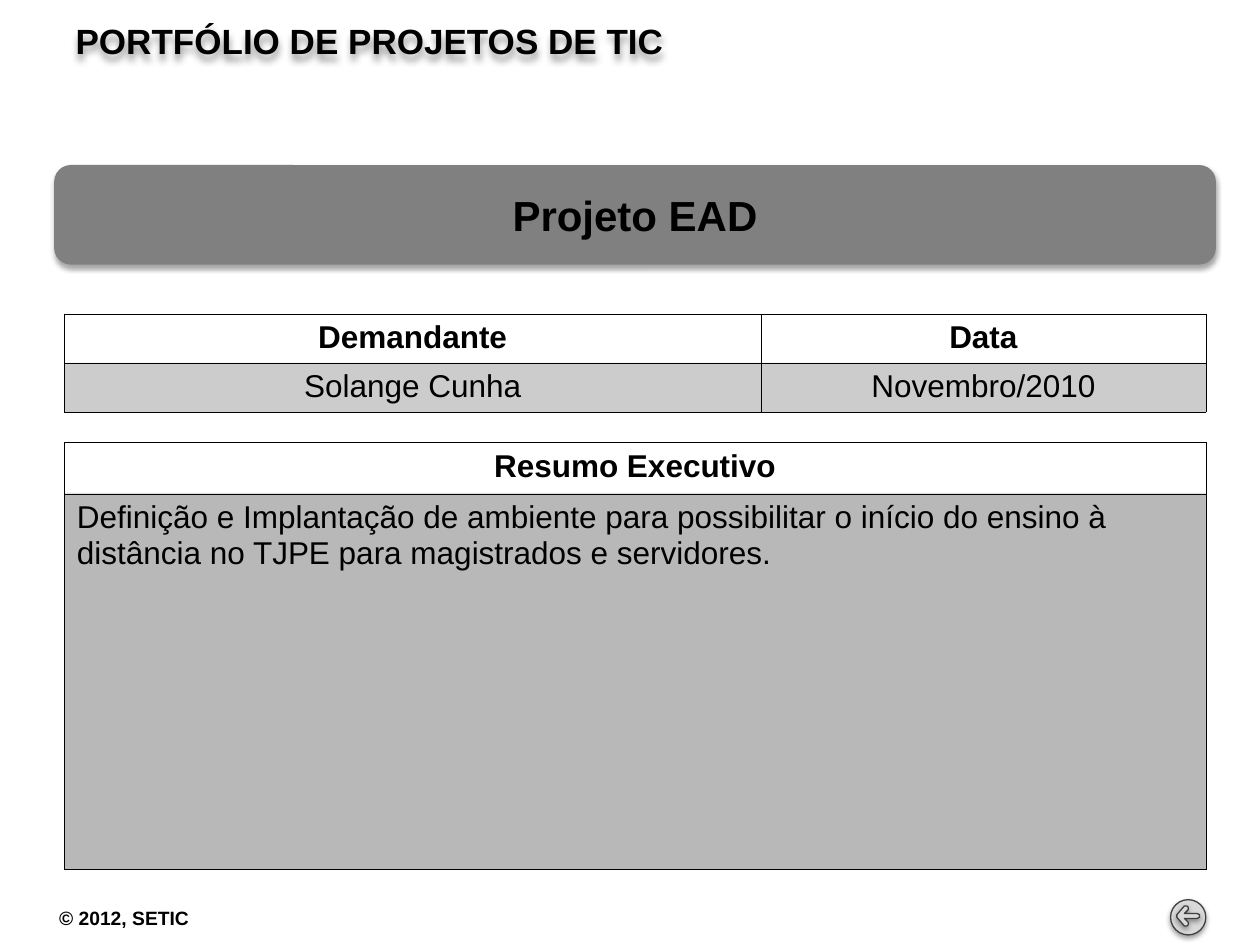
from lxml import etree
from pptx import Presentation
from pptx.dml.color import RGBColor
from pptx.enum.shapes import MSO_SHAPE
from pptx.enum.text import MSO_ANCHOR, PP_ALIGN
from pptx.oxml.ns import qn
from pptx.util import Inches, Pt

FONT = "Arial"
COLORS = {
    "black": "000000",
    "banner": "808080",
    "panel": "E6E6E6",
    "button": "D9D9D9",
    "outline": "404040",
}


def color(name):
    return RGBColor.from_string(COLORS[name])


def format_text(frame, text, size, bold=True, align=PP_ALIGN.LEFT):
    frame.text = text
    paragraph = frame.paragraphs[0]
    paragraph.alignment = align
    font = paragraph.font
    font.name, font.size, font.bold = FONT, Pt(size), bold
    font.color.rgb = color("black")


def add_alpha(fill_parent, percent):
    srgb = fill_parent.find(".//" + qn("a:srgbClr"))
    etree.SubElement(srgb, qn("a:alpha"), val=str(percent * 1000))


def add_shadow(shape, opacity, blur, distance):
    properties = shape._element.spPr
    for old in properties.findall(qn("a:effectLst")):
        properties.remove(old)
    effects = etree.SubElement(properties, qn("a:effectLst"))
    shadow = etree.SubElement(
        effects, qn("a:outerShdw"), blurRad=str(Pt(blur)), dist=str(Pt(distance)),
        dir="5400000", algn="ctr", rotWithShape="0")
    etree.SubElement(shadow, qn("a:srgbClr"), val=COLORS["black"])
    add_alpha(effects, opacity)


def add_plain_shape(slide, kind, box, fill):
    shape = slide.shapes.add_shape(kind, *map(Inches, box))
    shape.shadow.inherit = False
    shape.fill.solid()
    shape.fill.fore_color.rgb = color(fill)
    shape.line.fill.background()
    return shape


def place_title(slide, box, text):
    title = slide.shapes.title
    title.left, title.top, title.width, title.height = map(Inches, box)
    format_text(title.text_frame, text, 20)
    title.text_frame.vertical_anchor = MSO_ANCHOR.MIDDLE
    add_shadow(title, 40, 4, 3)


def add_banner(slide, box, text):
    banner = add_plain_shape(slide, MSO_SHAPE.ROUNDED_RECTANGLE, box, "banner")
    format_text(banner.text_frame, text, 24, align=PP_ALIGN.CENTER)
    banner.text_frame.vertical_anchor = MSO_ANCHOR.MIDDLE
    add_shadow(banner, 35, 3.1, 1.8)


def add_cell_borders(cell):
    properties = cell._tc.get_or_add_tcPr()
    for index, side in enumerate(("a:lnL", "a:lnR", "a:lnT", "a:lnB")):
        line = etree.Element(qn(side), w=str(Pt(0.25)))
        fill = etree.SubElement(line, qn("a:solidFill"))
        etree.SubElement(fill, qn("a:srgbClr"), val=COLORS["black"])
        properties.insert(index, line)


def add_info_table(slide, box, widths, heights, rows, body_align):
    table = slide.shapes.add_table(len(rows), len(widths), *map(Inches, box)).table
    table.horz_banding = table.first_row = False
    for column, width in zip(table.columns, widths):
        column.width = Inches(width)
    for row_index, (height, texts) in enumerate(zip(heights, rows)):
        table.rows[row_index].height = Inches(height)
        header = row_index == 0
        for column_index, text in enumerate(texts):
            cell = table.cell(row_index, column_index)
            format_text(cell.text_frame, text, 18, bold=header,
                        align=PP_ALIGN.CENTER if header else body_align)
            if header:
                cell.fill.background()
            else:
                cell.fill.solid()
                cell.fill.fore_color.rgb = color("black")
                add_alpha(cell._tc.tcPr, 20)
            add_cell_borders(cell)


def add_footer(slide, box, text):
    footer = slide.shapes.add_textbox(*map(Inches, box))
    footer.text_frame.word_wrap = False
    format_text(footer.text_frame, text, 11)


def add_back_button(slide, box):
    left, top, width, height = box
    circle = add_plain_shape(slide, MSO_SHAPE.OVAL, box, "button")
    # Upper half of the arrow, from its tip, as offsets from the centre
    upper = [(-0.09, -0.01), (-0.03, -0.08), (-0.01, -0.08), (0, -0.07),
             (0, -0.05), (-0.03, -0.02), (0.07, -0.02), (0.09, -0.01)]
    outline = upper + [(x, -y) for x, y in reversed(upper)]
    center_x, center_y = left + width / 2, top + height / 2 - 0.01
    points = [(Inches(center_x + x), Inches(center_y + y)) for x, y in outline]
    builder = slide.shapes.build_freeform(*points[0])
    builder.add_line_segments(points[1:], close=True)
    arrow = builder.convert_to_shape()
    arrow.fill.solid()
    arrow.fill.fore_color.rgb = color("button")
    for shape in (circle, arrow):
        shape.line.color.rgb = color("outline")
        shape.line.width = Pt(0.75)
        add_shadow(shape, 38, 3.1, 1.6)


def main():
    presentation = Presentation()
    presentation.slide_width, presentation.slide_height = Inches(10), Inches(7.5)
    slide = presentation.slides.add_slide(presentation.slide_layouts[5])

    # Heading
    place_title(slide, (0.5, 0.05, 7.57, 0.55), "PORTFÓLIO DE PROJETOS DE TIC")
    add_banner(slide, (0.43, 1.31, 9.22, 0.79), "Projeto EAD")

    # Requester and date
    add_info_table(slide, (0.51, 2.49, 9.06, 0.78), (5.53, 3.53), (0.39, 0.39),
                   [("Demandante", "Data"), ("Solange Cunha", "Novembro/2010")],
                   PP_ALIGN.CENTER)

    # Executive summary over its grey panel
    add_plain_shape(slide, MSO_SHAPE.RECTANGLE, (0.51, 3.91, 9.06, 2.99), "panel")
    summary = ("Definição e Implantação de ambiente para possibilitar o início do "
               "ensino à distância no TJPE para magistrados e servidores.")
    add_info_table(slide, (0.51, 3.51, 9.06, 3.39), (9.06,), (0.41, 2.98),
                   [("Resumo Executivo",), (summary,)], PP_ALIGN.LEFT)

    # Footer
    add_footer(slide, (0.37, 7.14, 1.28, 0.29), "© 2012, SETIC")
    add_back_button(slide, (9.29, 7.14, 0.28, 0.28))
    presentation.save("out.pptx")


if __name__ == "__main__":
    main()
